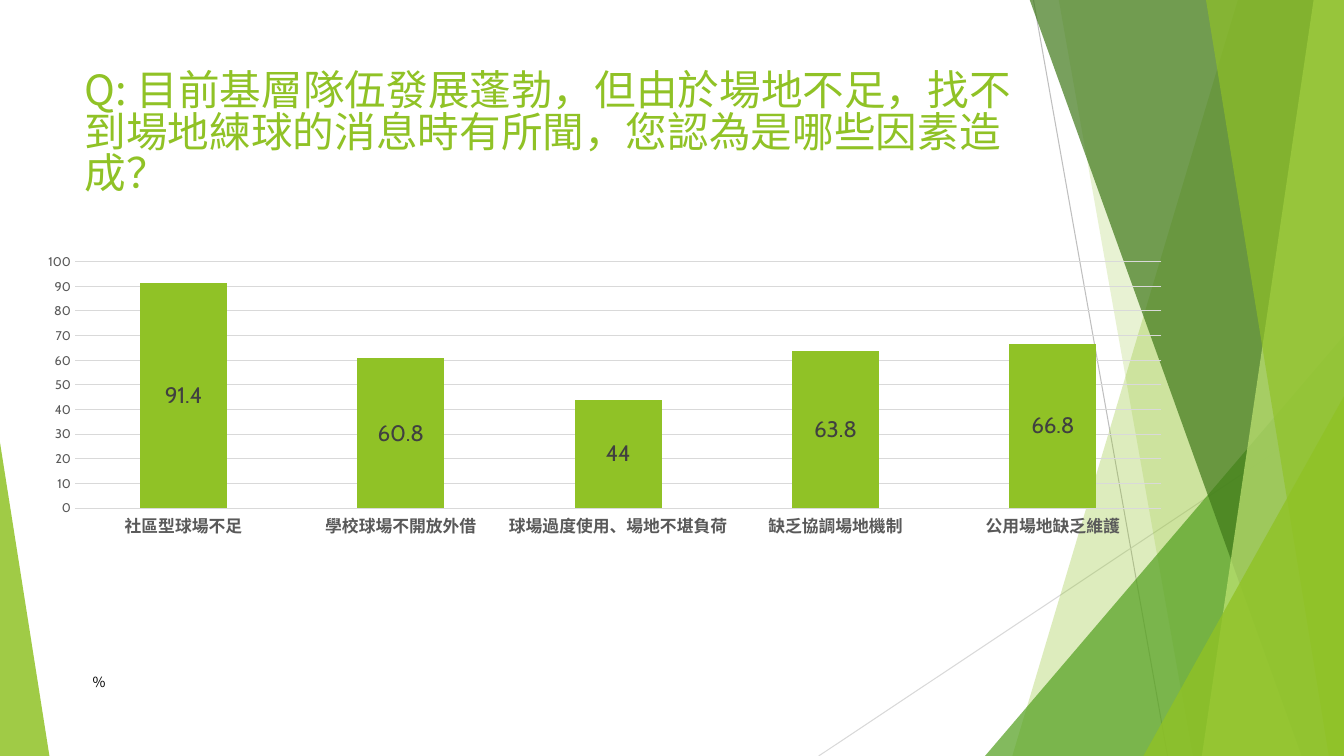
from lxml import etree
from pptx import Presentation
from pptx.chart.data import CategoryChartData
from pptx.dml.color import RGBColor
from pptx.enum.chart import XL_CHART_TYPE as CT, XL_LABEL_POSITION as LP, XL_TICK_MARK as TM
from pptx.enum.shapes import MSO_CONNECTOR as MC, MSO_SHAPE as MS
from pptx.enum.text import MSO_ANCHOR as MA, MSO_AUTO_SIZE as AS, PP_ALIGN as PA
from pptx.oxml.ns import qn
from pptx.util import Inches, Pt

W, H = 13.33, 7.5
LATIN, CJK = "Cabin", "Noto Sans CJK SC"
COLORS = {
    "lime": "90C226", "green": "54A021", "dark": "3F7819", "pale": "C0E474",
    "gray": "BFBFBF", "light": "D9D9D9", "axis": "595959", "label": "404040", "black": "000000",
}
QUESTION = "Q: 目前基層隊伍發展蓬勃，但由於場地不足，找不到場地練球的消息時有所聞，您認為是哪些因素造成？"
CAUSES = {
    "社區型球場不足": 91.4, "學校球場不開放外借": 60.8, "球場過度使用、場地不堪負荷": 44,
    "缺乏協調場地機制": 63.8, "公用場地缺乏維護": 66.8,
}


def rgb(name):
    """Return the palette colour called name."""
    return RGBColor.from_string(COLORS[name])


def style_font(font, size, color, face=CJK, bold=False):
    """Set size, colour and face of a font for Latin and East Asian text."""
    font.size, font.name, font.bold = Pt(size), face, bold
    font.color.rgb = rgb(color)
    latin = font._element.find(qn("a:latin"))
    ea = etree.Element(qn("a:ea"), typeface=face)
    latin.addnext(ea)


def fill_pane(sp, color, alpha):
    """Give a decoration shape a translucent fill and no line."""
    sp.shadow.inherit = False
    sp.fill.solid()
    sp.fill.fore_color.rgb = rgb(color)
    sp.line.fill.background()
    clr = sp._element.spPr.find(qn("a:solidFill"))[0]
    etree.SubElement(clr, qn("a:alpha"), val=str(alpha * 1000))


def add_ray(s, x1, y1, x2, y2, color):
    """Draw one thin straight line."""
    cx = s.shapes.add_connector(MC.STRAIGHT, *map(Inches, (x1, y1, x2, y2)))
    cx.line.color.rgb = rgb(color)
    cx.line.width = Pt(0.75)
    etree.SubElement(cx._element.spPr, qn("a:effectLst"))


def add_pane(s, top_x, bottom_x, color, alpha):
    """Draw a pane from a slanted left edge to the right slide edge."""
    pts = [(Inches(x), Inches(y)) for x, y in
           ((top_x, -0.01), (W, -0.01), (W, H), (bottom_x, H))]
    fb = s.shapes.build_freeform(*pts[0], scale=1.0)
    fb.add_line_segments(pts[1:], close=True)
    fill_pane(fb.convert_to_shape(), color, alpha)


def add_corner(s, left, top, width, apex, color, alpha):
    """Draw a triangle standing on the bottom edge of the slide."""
    sp = s.shapes.add_shape(MS.ISOSCELES_TRIANGLE, *map(Inches, (left, top, width, H - top)))
    sp.adjustments[0] = apex
    fill_pane(sp, color, alpha)


def add_facets(s):
    """Draw the green facets along both slide edges."""
    add_ray(s, 10.25, 0, 11.58, H, "gray")
    add_ray(s, W, 4.03, 8.12, H, "light")
    add_pane(s, 12.28, 10.04, "lime", 30)
    add_pane(s, 10.5, 11.83, "lime", 20)
    add_corner(s, 9.77, 3.33, 3.56, 1, "green", 72)
    add_pane(s, 10.21, 12.91, "dark", 70)
    add_pane(s, 13.03, 11.92, "pale", 70)
    add_pane(s, 11.96, 13.18, "lime", 65)
    add_corner(s, 11.34, 3.93, 1.99, 1, "lime", 80)
    add_corner(s, 0, 4.39, 0.49, 0, "lime", 85)


def add_question(s, left, top, width, height):
    """Place the question in the title placeholder, in front of the facets."""
    sp = s.shapes.title
    s.shapes._spTree.append(sp._element)
    sp.left, sp.top, sp.width, sp.height = map(Inches, (left, top, width, height))
    tf = sp.text_frame
    tf.text = QUESTION
    tf.word_wrap, tf.auto_size, tf.vertical_anchor = True, AS.NONE, MA.TOP
    p = tf.paragraphs[0]
    p.alignment, p.line_spacing = PA.LEFT, 0.83
    style_font(p.runs[0].font, 29.7, "lime")


def add_causes_chart(s, left, top, width, height):
    """Chart the share of answers for each cause."""
    data = CategoryChartData()
    data.categories = list(CAUSES)
    data.add_series("Series 1", list(CAUSES.values()))
    box = map(Inches, (left, top, width, height))
    chart = s.shapes.add_chart(CT.COLUMN_STACKED, *box, data).chart
    chart.has_legend = chart.has_title = False
    style_font(chart.font, 10, "black", LATIN)

    cat, val = chart.category_axis, chart.value_axis
    for axis in (cat, val):
        axis.major_tick_mark = axis.minor_tick_mark = TM.NONE
    style_font(cat.tick_labels.font, 12, "axis", bold=True)
    style_font(val.tick_labels.font, 9, "axis", LATIN)
    val.minimum_scale, val.maximum_scale, val.major_unit = 0, 100, 10
    val.has_major_gridlines = True
    val.format.line.fill.background()
    for line in (cat.format.line, val.major_gridlines.format.line):
        line.color.rgb = rgb("light")
        line.width = Pt(0.75)

    plot = chart.plots[0]
    plot.gap_width, plot.overlap, plot.vary_by_categories = 150, 100, False
    ser = plot.series[0]
    ser.format.fill.solid()
    ser.format.fill.fore_color.rgb = rgb("lime")
    labels = ser.data_labels
    labels.show_value, labels.position = True, LP.CENTER
    style_font(labels.font, 16, "label", LATIN)


def add_unit(s, left, top, width, height):
    """Place the unit of the chart values."""
    tf = s.shapes.add_textbox(*map(Inches, (left, top, width, height))).text_frame
    tf.text = "%"
    tf.word_wrap, tf.auto_size = True, AS.SHAPE_TO_FIT_TEXT
    style_font(tf.paragraphs[0].runs[0].font, 10, "black")


def main():
    """Build the survey slide and save it."""
    prs = Presentation()
    prs.slide_width, prs.slide_height = Inches(W), Inches(H)
    s = prs.slides.add_slide(prs.slide_layouts[5])
    add_facets(s)
    add_question(s, 0.74, 0.67, 9.4, 1.44)
    add_causes_chart(s, 0.25, 2.46, 11.5, 2.93)
    add_unit(s, 0.82, 6.63, 1.13, 0.27)
    prs.save("out.pptx")


if __name__ == "__main__":
    main()
